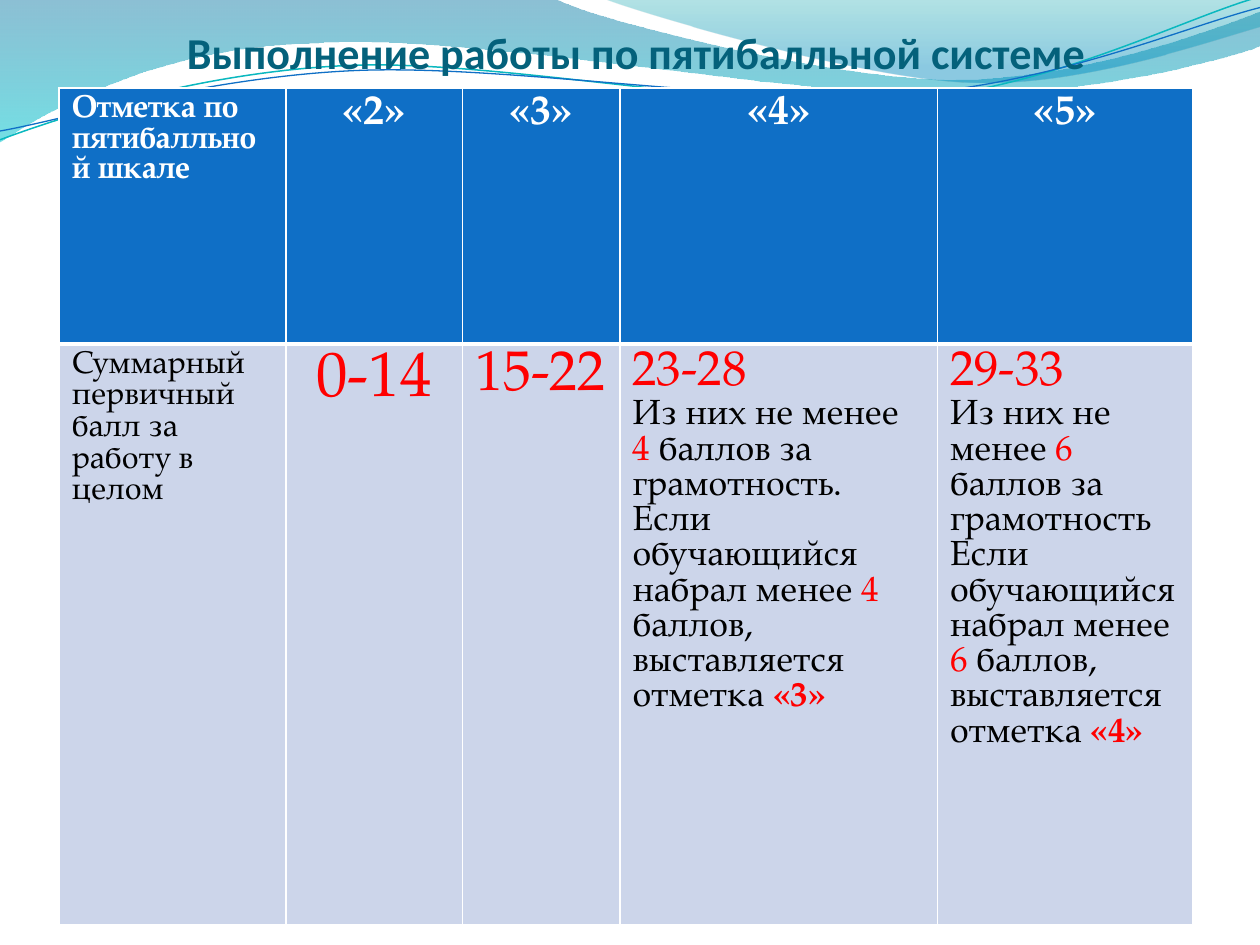
from lxml.etree import SubElement
from pptx import Presentation
from pptx.dml.color import RGBColor
from pptx.enum.text import MSO_ANCHOR, MSO_AUTO_SIZE, PP_ALIGN
from pptx.oxml.ns import qn
from pptx.util import Inches, Pt

WHITE = RGBColor(0xFF, 0xFF, 0xFF)
BLACK = RGBColor(0, 0, 0)
RED = RGBColor(0xFF, 0, 0)
BLUE = RGBColor(0x0F, 0x6F, 0xC6)
PALE = RGBColor(0xCC, 0xD5, 0xEA)
TITLE_COLOR = RGBColor(0x04, 0x61, 0x7B)
TEAL = RGBColor(0x0A, 0xB8, 0xBF)
FONT = "TeX Gyre Pagella"

TITLE = "Выполнение работы по пятибалльной системе"
HEADER = [("Отметка по пятибалльной шкале", 18), ("«2»", 24), ("«3»", 24), ("«4»", 24), ("«5»", 24)]
LABEL = "Суммарный первичный балл за работу в целом"
COLS = [1.8, 1.4, 1.25, 2.52, 2.03]
ROWS = [2.03, 4.61]


def condition(score, points, stop, lower):
    return [
        [(score, 28, RED, False)],
        [("Из них не менее ", 20, BLACK, False),
         (f"{points} ", 20, RED, False),
         (f"баллов за грамотность{stop} Если обучающийся набрал менее ", 20, BLACK, False),
         (f"{points} ", 20, RED, False),
         ("баллов, выставляется отметка ", 20, BLACK, False),
         (lower, 20, RED, True)],
    ]


BODY = [
    [[(LABEL, 18, BLACK, False)]],
    [[("0-14", 36, RED, False)]],
    [[("15-22", 32, RED, False)]],
    condition("23-28", 4, ".", "«3»"),
    condition("29-33", 6, "", "«4»"),
]
CENTERED = {(0, 1), (0, 2), (0, 3), (0, 4), (1, 1)}

WAVES = [
    ([(0, 0), (4.4, -0.01),
      (4.76, 0.17, 6.64, 0.63, 7.58, 0.63), (8.53, 0.63, 9.58, 0.26, 10, 0.09),
      (10.01, 0.36),
      (9.83, 0.44, 8.7, 0.76, 7.46, 0.75), (6.22, 0.75, 3.82, 0.28, 2.57, 0.34),
      (1.29, 0.36, 0.46, 0.83, -0.01, 1.13)],
     [(0, RGBColor(0x00, 0x74, 0xA1), 45), (1, RGBColor(0x00, 0xC6, 0xCF), 55)]),
    ([(4.79, -0.01),
      (5.09, 0.11, 6.82, 0.62, 7.69, 0.65), (8.56, 0.69, 9.61, 0.32, 10, 0.21),
      (10, 0)],
     [(0, RGBColor(0x00, 0xA1, 0xA9), 30), (0.8, RGBColor(0x00, 0x8B, 0xBF), 45)]),
]
STRANDS = [
    ([(0, 1.11), (0.48, 0.93, 1.58, 0.57, 2.77, 0.52),
      (3.95, 0.47, 5.93, 0.89, 7.13, 0.8), (8.33, 0.71, 9.38, 0.15, 9.98, -0.02)], TEAL, 0.85),
    ([(0, 1.04), (0.47, 0.96, 1.64, 0.61, 2.83, 0.56),
      (4.03, 0.51, 5.97, 0.84, 7.17, 0.75), (8.36, 0.67, 9.41, 0.21, 10, 0.06)], BLUE, 0.75),
]


def add_curve(s, steps, close):
    anchors = [(Inches(step[-2]), Inches(step[-1])) for step in steps]
    builder = s.shapes.build_freeform(*anchors[0])
    builder.add_line_segments(anchors[1:], close=close)
    sp = builder.convert_to_shape()
    sp.shadow.inherit = False
    for segment, step in zip(list(sp.element.iter(qn("a:lnTo"))), steps[1:]):
        if len(step) == 6:
            segment.tag = qn("a:cubicBezTo")
            for i in (2, 0):
                x, y = Inches(step[i]) - sp.left, Inches(step[i + 1]) - sp.top
                segment.insert(0, segment.makeelement(qn("a:pt"), {"x": str(x), "y": str(y)}))
    return sp


def add_wave(s, steps, stops):
    sp = add_curve(s, steps, True)
    sp.line.fill.background()
    sp.fill.gradient()
    sp.fill.gradient_angle = 270
    for stop, (position, color, _) in zip(sp.fill.gradient_stops, stops):
        stop.position = position
        stop.color.rgb = color
    for clr, (_, _, alpha) in zip(sp.element.spPr.iter(qn("a:srgbClr")), stops):
        SubElement(clr, qn("a:alpha"), val=str(alpha * 1000))


def add_strand(s, steps, color, width):
    sp = add_curve(s, steps, False)
    sp.fill.background()
    sp.line.color.rgb = color
    sp.line.width = Pt(width)


def set_font(font, size, color, bold, name=FONT):
    font.name, font.size, font.bold = name, Pt(size), bold
    font.color.rgb = color


def set_title(s):
    sp = s.shapes.title
    sp.left, sp.top, sp.width, sp.height = (Inches(v) for v in (0.55, 0.23, 9, 0.39))
    tf = sp.text_frame
    tf.text = TITLE
    tf.auto_size = MSO_AUTO_SIZE.NONE
    tf.vertical_anchor = MSO_ANCHOR.BOTTOM
    tf.margin_left = tf.margin_right = tf.margin_bottom = 0
    tf.margin_top = Inches(0.05)
    p = tf.paragraphs[0]
    p.alignment = PP_ALIGN.CENTER
    set_font(p.font, 25.2, TITLE_COLOR, True, "Calibri")


def set_borders(cell, bottom):
    tcPr = cell._tc.get_or_add_tcPr()
    for i, (side, width) in enumerate([("L", 1), ("R", 1), ("T", 1), ("B", bottom)]):
        ln = tcPr.makeelement(qn(f"a:ln{side}"), {"w": str(Pt(width))})
        SubElement(SubElement(ln, qn("a:solidFill")), qn("a:srgbClr"), val=str(WHITE))
        tcPr.insert(i, ln)


def fill_cell(cell, paragraphs, color, bottom, centered):
    cell.fill.solid()
    cell.fill.fore_color.rgb = color
    set_borders(cell, bottom)
    tf = cell.text_frame
    for i, runs in enumerate(paragraphs):
        p = tf.add_paragraph() if i else tf.paragraphs[0]
        p.alignment = PP_ALIGN.CENTER if centered else PP_ALIGN.LEFT
        for text, *style in runs:
            r = p.add_run()
            r.text = text
            set_font(r.font, *style)


def add_scores(s):
    table = s.shapes.add_table(len(ROWS), len(COLS), Inches(0.47), Inches(0.7),
                               Inches(sum(COLS)), Inches(sum(ROWS))).table
    for col, width in zip(table.columns, COLS):
        col.width = Inches(width)
    for row, height in zip(table.rows, ROWS):
        row.height = Inches(height)
    header = [[[(text, size, WHITE, True)]] for text, size in HEADER]
    for i, (cells, color, bottom) in enumerate([(header, BLUE, 3), (BODY, PALE, 1)]):
        for j, paragraphs in enumerate(cells):
            fill_cell(table.cell(i, j), paragraphs, color, bottom, (i, j) in CENTERED)


def main():
    prs = Presentation()
    prs.slide_width, prs.slide_height = Inches(10), Inches(7.5)
    s = prs.slides.add_slide(prs.slide_layouts[5])
    for wave in WAVES:
        add_wave(s, *wave)
    for strand in STRANDS:
        add_strand(s, *strand)
    set_title(s)
    s.shapes._spTree.append(s.shapes.title.element)
    add_scores(s)
    prs.save("out.pptx")


if __name__ == "__main__":
    main()
